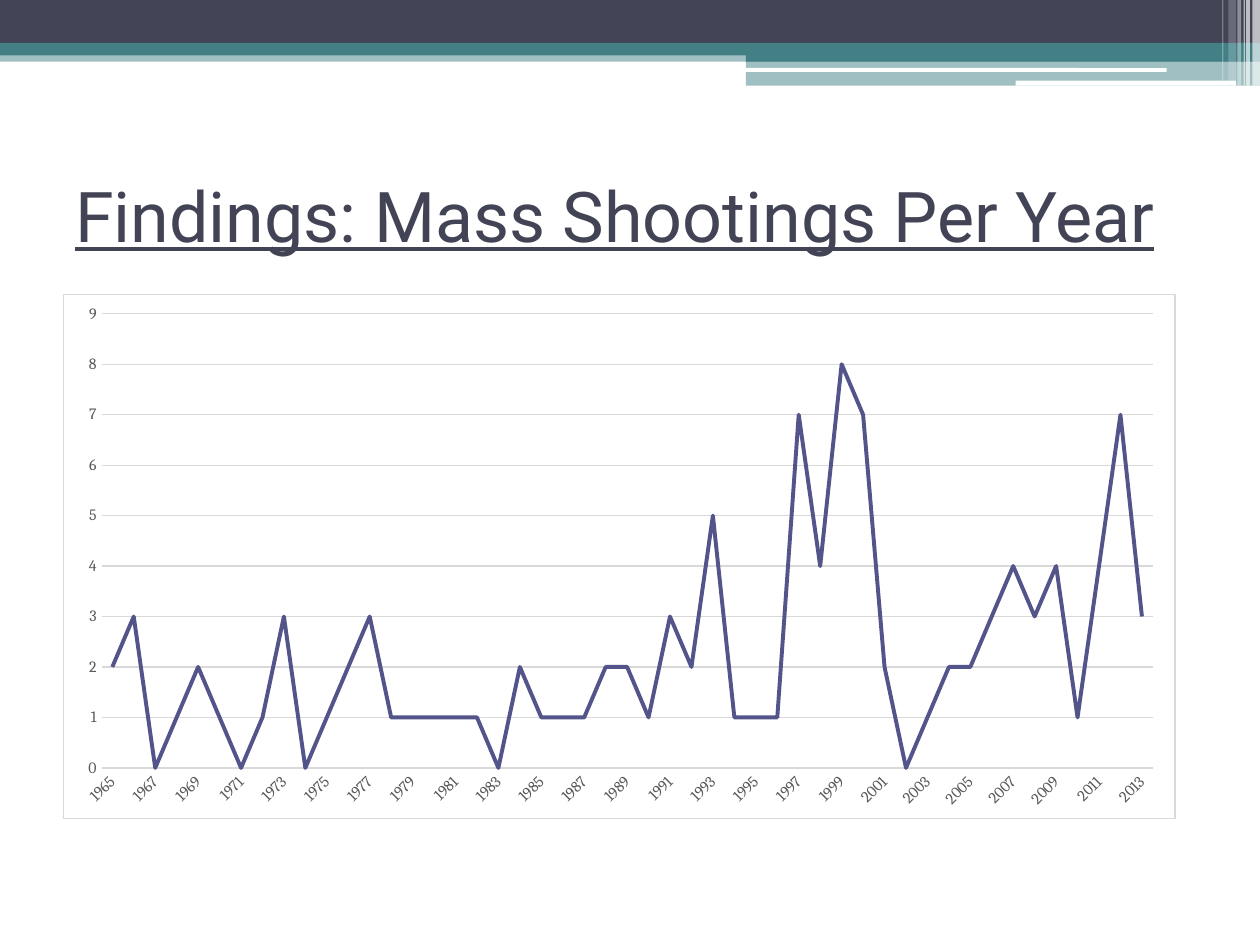
from dataclasses import dataclass

import pptx
import pptx.chart.data
import pptx.dml.color
import pptx.enum.chart
import pptx.enum.shapes
import pptx.enum.text
import pptx.oxml
import pptx.oxml.ns
import pptx.util

Inches = pptx.util.Inches
Pt = pptx.util.Pt
qn = pptx.oxml.ns.qn


@dataclass(frozen=True)
class Theme:
    navy: str = "424456"
    teal: str = "438086"
    white: str = "FFFFFF"
    series: str = "53548A"
    rule: str = "D9D9D9"
    label: str = "595959"
    title_font: str = "Roboto"
    chart_font: str = "Cambria"
    title_size: float = 40
    label_size: float = 9
    rule_width: float = 0.75
    series_width: float = 2.25


THEME = Theme()
FIRST_YEAR = 1965
SHOOTINGS = [
    2, 3, 0, 1, 2, 1, 0, 1, 3, 0, 1, 2, 3, 1, 1, 1, 1, 1, 0, 2, 1, 1, 1, 2, 2,
    1, 3, 2, 5, 1, 1, 1, 7, 4, 8, 7, 2, 0, 1, 2, 2, 3, 4, 3, 4, 1, 4, 7, 3,
]


def rgb(color):
    return pptx.dml.color.RGBColor.from_string(color)


def add_band(slide, box, color, opacity=100, rounded=False):
    kinds = pptx.enum.shapes.MSO_SHAPE
    kind = kinds.ROUNDED_RECTANGLE if rounded else kinds.RECTANGLE
    band = slide.shapes.add_shape(kind, *map(Inches, box))
    band.shadow.inherit = False
    band.line.fill.background()
    band.fill.solid()
    band.fill.fore_color.rgb = rgb(color)
    if opacity < 100:
        tint = band.fill._xPr.find(".//" + qn("a:srgbClr"))
        tint.append(pptx.oxml.parse_xml(
            f'<a:alpha {pptx.oxml.ns.nsdecls("a")} val="{opacity * 1000}"/>'))


def add_header(slide, left, top, width):
    right = left + width
    step = left + 5.92
    add_band(slide, (left, top + 0.4, width, 0.09), THEME.teal, 50)
    add_band(slide, (left, top, width, 0.34), THEME.navy)
    add_band(slide, (left, top + 0.34, width, 0.1), THEME.teal)
    add_band(slide, (step, top + 0.39, right - step, 0.1), THEME.teal)
    add_band(slide, (step, top + 0.48, right - step, 0.2), THEME.teal, 50)
    add_band(slide, (left + 5.91, top + 0.54, 3.35, 0.03), THEME.white, rounded=True)
    add_band(slide, (left + 8.06, top + 0.64, 1.75, 0.04), THEME.white, rounded=True)
    stripes = [
        (0.06, 0.06, 0.68, 65), (0.11, 0.03, 0.68, 65), (0.13, 0.01, 0.68, 60),
        (0.18, 0.03, 0.68, 40), (0.25, 0.06, 0.64, 20), (0.3, 0.01, 0.64, 30),
    ]
    for inset, thickness, height, opacity in stripes:
        add_band(slide, (right - inset, top, thickness, height), THEME.white, opacity)


def add_title(slide, left, top, width, height):
    title = slide.shapes.add_textbox(*map(Inches, (left, top, width, height)))
    frame = title.text_frame
    frame.word_wrap = True
    frame.vertical_anchor = pptx.enum.text.MSO_ANCHOR.MIDDLE
    heading = frame.paragraphs[0].add_run()
    heading.text = "Findings: Mass Shootings Per Year"
    heading.font.name = THEME.title_font
    heading.font.size = Pt(THEME.title_size)
    heading.font.underline = True
    heading.font.color.rgb = rgb(THEME.navy)


def style_rule(line):
    line.color.rgb = rgb(THEME.rule)
    line.width = Pt(THEME.rule_width)


def frame_chart(chart):
    chart._chartSpace.find(qn("c:chart")).addnext(pptx.oxml.parse_xml(
        f'<c:spPr {pptx.oxml.ns.nsdecls("c", "a")}>'
        f'<a:solidFill><a:srgbClr val="{THEME.white}"/></a:solidFill>'
        f'<a:ln w="{Pt(THEME.rule_width)}"><a:solidFill>'
        f'<a:srgbClr val="{THEME.rule}"/></a:solidFill></a:ln></c:spPr>'))


def add_yearly_chart(slide, left, top, width, height):
    yearly = pptx.chart.data.CategoryChartData()
    yearly.categories = [str(FIRST_YEAR + i) for i in range(len(SHOOTINGS))]
    yearly.add_series("Series 1", SHOOTINGS)
    chart = slide.shapes.add_chart(
        pptx.enum.chart.XL_CHART_TYPE.LINE,
        *map(Inches, (left, top, width, height)), yearly).chart
    chart.has_legend = False
    chart.has_title = False
    chart.font.name = THEME.chart_font
    chart.font.size = Pt(THEME.label_size)
    chart.font.color.rgb = rgb(THEME.label)
    frame_chart(chart)

    plot = chart.plots[0]
    plot.vary_by_categories = False
    shootings = plot.series[0]
    shootings.smooth = False
    shootings.marker.style = pptx.enum.chart.XL_MARKER_STYLE.NONE
    shootings.format.line.color.rgb = rgb(THEME.series)
    shootings.format.line.width = Pt(THEME.series_width)

    years, counts = chart.category_axis, chart.value_axis
    for axis in (years, counts):
        axis.major_tick_mark = pptx.enum.chart.XL_TICK_MARK.NONE
        axis.minor_tick_mark = pptx.enum.chart.XL_TICK_MARK.NONE
        labels = axis.tick_labels.font
        labels.name = THEME.chart_font
        labels.size = Pt(THEME.label_size)
        labels.color.rgb = rgb(THEME.label)
    style_rule(years.format.line)
    years._element.find(qn("c:txPr")).find(qn("a:bodyPr")).set("rot", "-2700000")
    counts.minimum_scale = 0
    counts.maximum_scale = 9
    counts.major_unit = 1
    counts.format.line.fill.background()
    style_rule(counts.major_gridlines.format.line)


def main():
    deck = pptx.Presentation()
    deck.slide_width = Inches(10)
    deck.slide_height = Inches(7.5)
    slide = deck.slides.add_slide(deck.slide_layouts[6])
    add_header(slide, 0, 0, 10)
    add_title(slide, 0.5, 1.3, 9, 0.8)
    add_yearly_chart(slide, 0.5, 2.33, 8.83, 4.17)
    deck.save("out.pptx")


if __name__ == "__main__":
    main()
